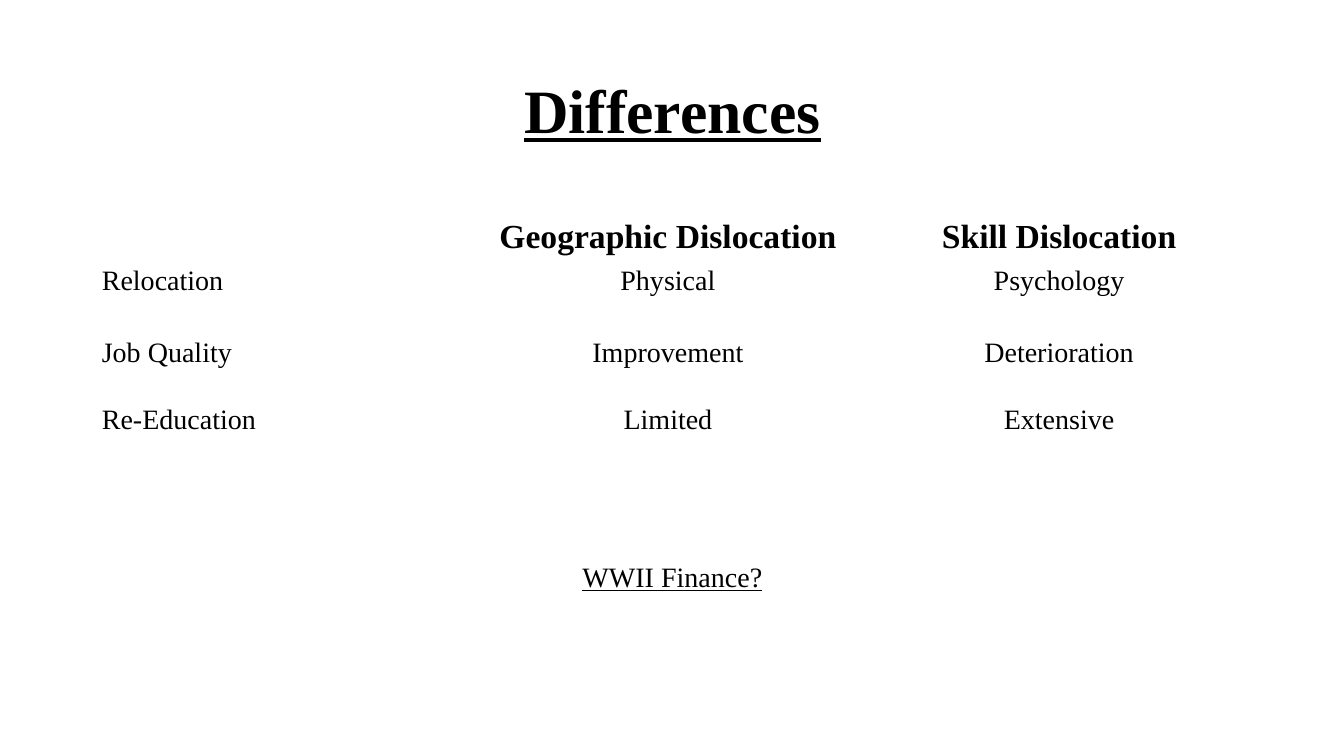
from pptx import Presentation
from pptx.dml.color import RGBColor
from pptx.enum.text import MSO_ANCHOR, PP_ALIGN

LEFT, CENTER = PP_ALIGN.LEFT, PP_ALIGN.CENTER
TOP, MIDDLE = MSO_ANCHOR.TOP, MSO_ANCHOR.MIDDLE
EMU_PER_PX = 9144
EMU_PER_POINT = 12700
TITLE_ONLY = 5


def px(*lengths):
    return [length * EMU_PER_PX for length in lengths]


def color(value):
    return RGBColor.from_string(value)


class Page:
    """Holds the text style and the current slide."""

    font_name = "Times New Roman"
    ink = "000000"

    def __init__(self, deck):
        self.slide = deck.slides.add_slide(deck.slide_layouts[TITLE_ONLY])

    def set_text(self, frame, text, size, align=CENTER, bold=False, underline=False):
        frame.text = text
        para = frame.paragraphs[0]
        para.alignment = align
        font = para.font
        font.name, font.size = self.font_name, size * EMU_PER_POINT
        font.bold, font.underline = bold, underline
        font.color.rgb = color(self.ink)
        return para

    def title(self, text, bounds):
        box = self.slide.shapes.title
        box.left, box.top, box.width, box.height = px(*bounds)
        box.text_frame.vertical_anchor = MIDDLE
        para = self.set_text(box.text_frame, text, 44, bold=True, underline=True)
        para.line_spacing = 0.9

    def label(self, text, bounds):
        box = self.slide.shapes.add_textbox(*px(*bounds))
        box.text_frame.word_wrap = True
        self.set_text(box.text_frame, text, 20, underline=True)

    def table(self, rows, left, top, widths, heights):
        bounds = px(left, top, sum(widths), sum(heights))
        table = self.slide.shapes.add_table(len(rows), len(widths), *bounds).table
        table.first_row = table.horz_banding = False
        for column, width in zip(table.columns, px(*widths)):
            column.width = width
        for row, height in zip(table.rows, px(*heights)):
            row.height = height
        for r, values in enumerate(rows):
            for c, value in enumerate(values):
                cell = table.cell(r, c)
                cell.fill.background()
                cell.vertical_anchor = TOP
                cell.margin_left, cell.margin_right = px(9, 9)
                cell.margin_top, cell.margin_bottom = px(4, 4)
                self.set_text(
                    cell.text_frame,
                    value,
                    size=24 if r == 0 else 20,
                    align=LEFT if c == 0 else CENTER,
                    bold=r == 0,
                )


def main():
    deck = Presentation()
    deck.slide_width, deck.slide_height = px(1333, 750)
    page = Page(deck)
    page.title("Differences", (92, 40, 1150, 145))
    page.table(
        [
            ("", "Geographic Dislocation", "Skill Dislocation"),
            ("Relocation", "Physical", "Psychology"),
            ("Job Quality", "Improvement", "Deterioration"),
            ("Re-Education", "Limited", "Extensive"),
        ],
        left=92,
        top=213,
        widths=(374, 393, 383),
        heights=(46, 72, 66, 83),
    )
    page.label("WWII Finance?", (354, 550, 626, 44))
    deck.save("out.pptx")


if __name__ == "__main__":
    main()
